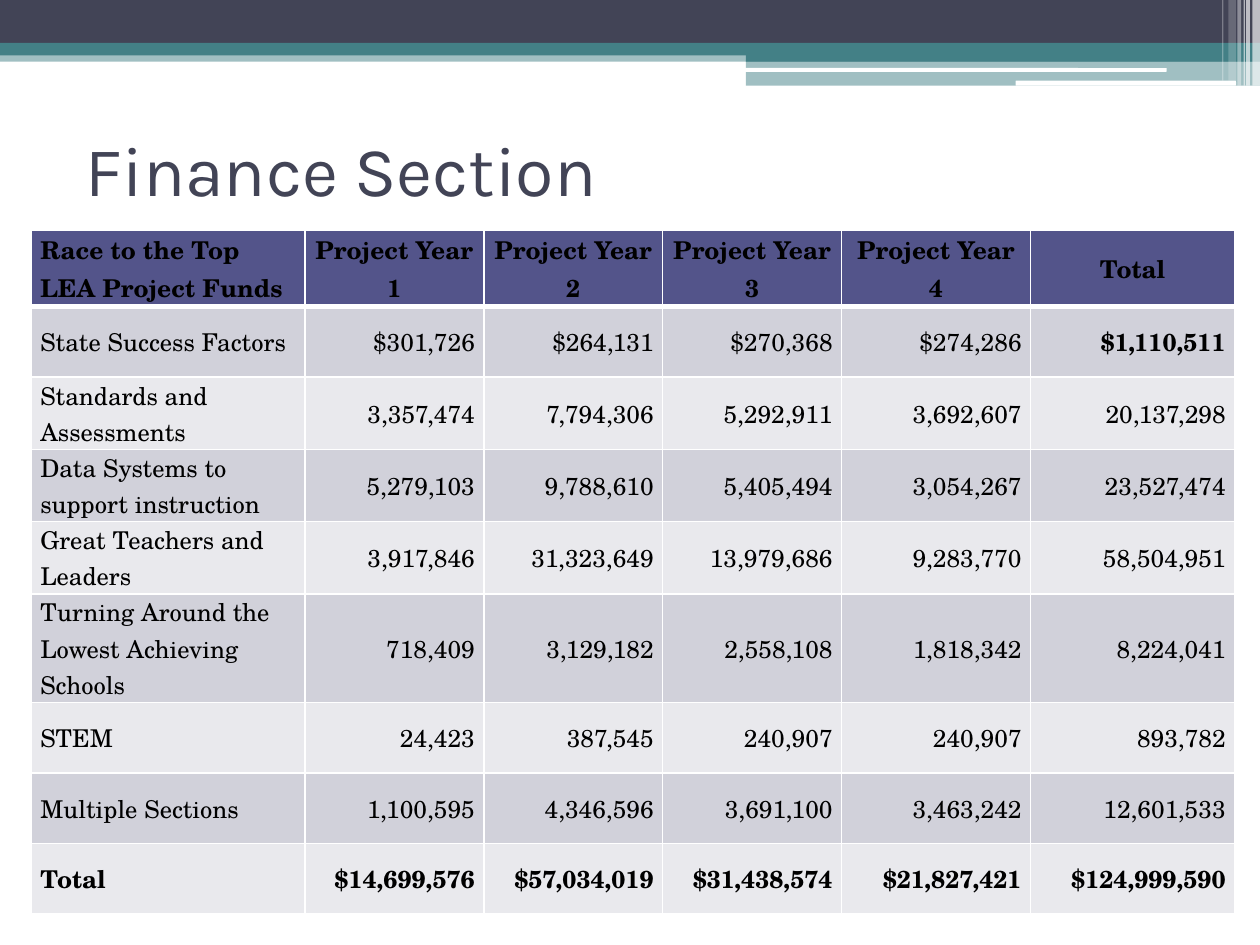
from typing import NamedTuple

from lxml import etree
from pptx import Presentation
from pptx.dml.color import RGBColor
from pptx.enum.shapes import MSO_SHAPE
from pptx.enum.text import MSO_ANCHOR, MSO_AUTO_SIZE, PP_ALIGN
from pptx.oxml.ns import qn
from pptx.util import Inches, Pt

RECT, ROUND = MSO_SHAPE.RECTANGLE, MSO_SHAPE.ROUNDED_RECTANGLE
MIDDLE = MSO_ANCHOR.MIDDLE
LEFT, CENTER, RIGHT = PP_ALIGN.LEFT, PP_ALIGN.CENTER, PP_ALIGN.RIGHT
NAVY, TEAL, WHITE, BLACK = "424456", "438086", "FFFFFF", "000000"
HEADER_FILL, ROW_FILLS = "53548A", ("D1D1DA", "E9E9ED")


class Band(NamedTuple):
    left: float
    top: float
    width: float
    height: float
    color: str
    opacity: int = 100
    kind: int = RECT


BANDS = [
    # Bars across the top
    Band(0, 0.4, 10, 0.09, TEAL, 50),
    Band(0, 0, 10, 0.34, NAVY),
    Band(0, 0.34, 10, 0.1, TEAL),
    Band(5.92, 0.39, 4.08, 0.1, TEAL),
    Band(5.92, 0.48, 4.08, 0.2, TEAL, 50),
    Band(5.91, 0.54, 3.35, 0.03, WHITE, kind=ROUND),
    Band(8.06, 0.64, 1.75, 0.04, WHITE, kind=ROUND),
    # Vertical stripes in the corner
    Band(9.94, 0, 0.06, 0.68, WHITE, 65),
    Band(9.89, 0, 0.03, 0.68, WHITE, 65),
    Band(9.87, 0, 0.01, 0.68, WHITE, 60),
    Band(9.82, 0, 0.03, 0.68, WHITE, 40),
    Band(9.75, 0, 0.06, 0.64, WHITE, 20),
    Band(9.7, 0, 0.01, 0.64, WHITE, 30),
]

COL_WIDTHS = [2.17, 1.42, 1.42, 1.42, 1.5, 1.62]
ROW_HEIGHTS = [0.56] * 5 + [0.71] + [0.56] * 3
FUNDS = [
    ["Race to the Top LEA Project Funds", "Project Year 1", "Project Year 2",
     "Project Year 3", "Project Year 4", "Total"],
    ["State Success Factors", "$301,726", "$264,131", "$270,368", "$274,286", "$1,110,511"],
    ["Standards and Assessments", "3,357,474", "7,794,306", "5,292,911", "3,692,607",
     "20,137,298"],
    ["Data Systems to support instruction", "5,279,103", "9,788,610", "5,405,494",
     "3,054,267", "23,527,474"],
    ["Great Teachers and Leaders", "3,917,846", "31,323,649", "13,979,686", "9,283,770",
     "58,504,951"],
    ["Turning Around the Lowest Achieving Schools", "718,409", "3,129,182", "2,558,108",
     "1,818,342", "8,224,041"],
    ["STEM", "24,423", "387,545", "240,907", "240,907", "893,782"],
    ["Multiple Sections", "1,100,595", "4,346,596", "3,691,100", "3,463,242", "12,601,533"],
    ["Total", "$14,699,576", "$57,034,019", "$31,438,574", "$21,827,421", "$124,999,590"],
]


def rgb(color: str) -> RGBColor:
    return RGBColor.from_string(color)


def write(tf, text: str, *, font: str, size: float, color: str,
          bold: bool = False, align: int = LEFT) -> None:
    p = tf.paragraphs[0]
    p.alignment = align
    r = p.add_run()
    r.text = text
    r.font.name = font
    r.font.size = Pt(size)
    r.font.bold = bold
    r.font.color.rgb = rgb(color)


def add_band(s, band: Band) -> None:
    sp = s.shapes.add_shape(band.kind, Inches(band.left), Inches(band.top),
                            Inches(band.width), Inches(band.height))
    sp.shadow.inherit = False
    sp.line.fill.background()
    sp.fill.solid()
    sp.fill.fore_color.rgb = rgb(band.color)
    if band.opacity < 100:
        clr = sp.fill._xPr.find(qn("a:solidFill"))[0]
        etree.SubElement(clr, qn("a:alpha"), val=str(band.opacity * 1000))


def set_borders(cell, top: float, bottom: float) -> None:
    tcPr = cell._tc.get_or_add_tcPr()
    for i, (side, width) in enumerate(zip("LRTB", (1, 1, top, bottom))):
        ln = etree.Element(qn(f"a:ln{side}"), w=str(Pt(width)))
        fill = etree.SubElement(ln, qn("a:solidFill"))
        etree.SubElement(fill, qn("a:srgbClr"), val=WHITE)
        tcPr.insert(i, ln)


def add_funds_table(s) -> None:
    last_row, last_col = len(FUNDS) - 1, len(COL_WIDTHS) - 1
    table = s.shapes.add_table(len(FUNDS), len(COL_WIDTHS), Inches(0.25), Inches(1.83),
                               Inches(sum(COL_WIDTHS)), Inches(sum(ROW_HEIGHTS))).table
    for column, width in zip(table.columns, COL_WIDTHS):
        column.width = Inches(width)
    for row, height in zip(table.rows, ROW_HEIGHTS):
        row.height = Inches(height)

    for i, values in enumerate(FUNDS):
        for j, text in enumerate(values):
            cell = table.cell(i, j)
            cell.margin_left = cell.margin_right = Inches(0.07)
            cell.margin_top = cell.margin_bottom = 0
            cell.vertical_anchor = MIDDLE
            cell.fill.solid()
            cell.fill.fore_color.rgb = rgb(ROW_FILLS[(i - 1) % 2] if i else HEADER_FILL)
            set_borders(cell, top=3 if i == 1 else 1, bottom=3 if i == 0 else 1)
            align = LEFT if j == 0 else RIGHT if i else CENTER
            bold = i in (0, last_row) or (i, j) == (1, last_col)
            write(cell.text_frame, text, font="TeX Gyre Schola", size=14,
                  color=BLACK, bold=bold, align=align)


def main() -> None:
    prs = Presentation()
    prs.slide_width, prs.slide_height = Inches(10), Inches(7.5)
    s = prs.slides.add_slide(prs.slide_layouts[5])

    # Decoration
    for band in BANDS:
        add_band(s, band)

    # Title
    title = s.shapes.title
    title.left, title.top = Inches(0.58), Inches(0.75)
    title.width, title.height = Inches(9), Inches(1.17)
    tf = title.text_frame
    tf.auto_size = MSO_AUTO_SIZE.NONE
    tf.vertical_anchor = MIDDLE
    write(tf, "Finance Section", font="Karla", size=40, color=NAVY)

    # Funds by project year
    add_funds_table(s)
    prs.save("out.pptx")


if __name__ == "__main__":
    main()
